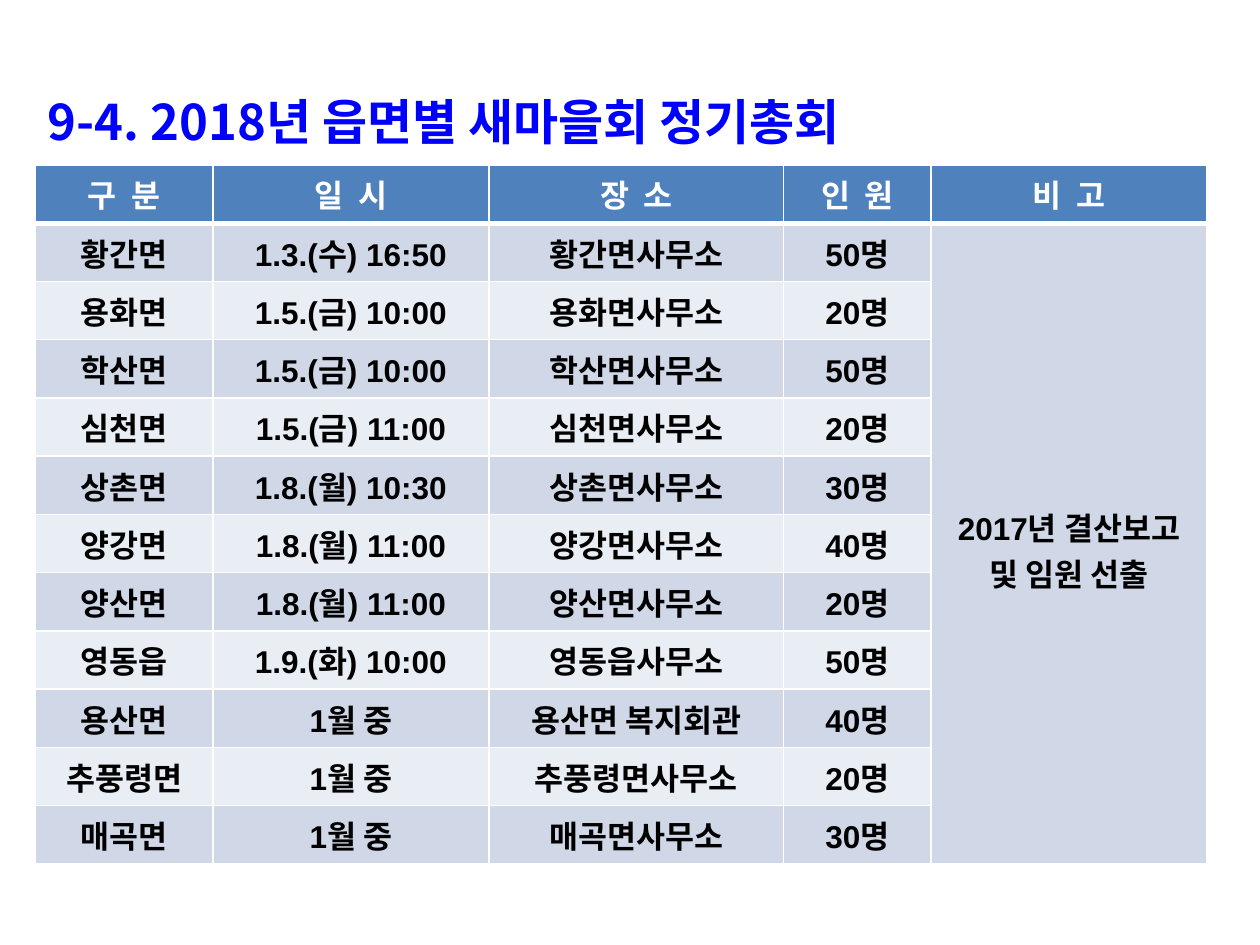
from lxml.etree import SubElement
from pptx import Presentation
from pptx.dml.color import RGBColor
from pptx.enum.text import MSO_ANCHOR, MSO_AUTO_SIZE, PP_ALIGN
from pptx.oxml.ns import qn
from pptx.util import Inches, Pt

COLORS = {
    "title": "0000FF",
    "header": "4F81BD",
    "odd": "D0D8E8",
    "even": "E9EDF4",
    "white": "FFFFFF",
    "black": "000000",
}
KOREAN_FONT = "Noto Sans CJK KR"
HEADERS = ["구  분", "일  시", "장  소", "인  원", "비  고"]
MEETINGS = [
    ("황간면", "1.3.(수) 16:50", "황간면사무소", "50명"),
    ("용화면", "1.5.(금) 10:00", "용화면사무소", "20명"),
    ("학산면", "1.5.(금) 10:00", "학산면사무소", "50명"),
    ("심천면", "1.5.(금) 11:00", "심천면사무소", "20명"),
    ("상촌면", "1.8.(월) 10:30", "상촌면사무소", "30명"),
    ("양강면", "1.8.(월) 11:00", "양강면사무소", "40명"),
    ("양산면", "1.8.(월) 11:00", "양산면사무소", "20명"),
    ("영동읍", "1.9.(화) 10:00", "영동읍사무소", "50명"),
    ("용산면", "1월 중", "용산면 복지회관", "40명"),
    ("추풍령면", "1월 중", "추풍령면사무소", "20명"),
    ("매곡면", "1월 중", "매곡면사무소", "30명"),
]
REMARK = "2017년 결산보고 및 임원 선출"
COLUMN_WIDTHS = [1.41, 2.19, 2.34, 1.17, 2.19]
HEADER_HEIGHT, ROW_HEIGHT = 0.43, 0.41


class SlideBuilder:
    """Hold the style and the current slide, and add its elements."""

    def __init__(self, presentation):
        self.slide = presentation.slides.add_slide(presentation.slide_layouts[5])

    def text(self, text_frame, text, size, color, font, alignment):
        text_frame.text = text
        paragraph = text_frame.paragraphs[0]
        paragraph.alignment = alignment
        for run in paragraph.runs:
            run.font.size = Pt(size)
            run.font.bold = True
            run.font.name = font
            run.font.color.rgb = RGBColor.from_string(COLORS[color])
            SubElement(run.font._element, qn("a:ea"), typeface=KOREAN_FONT)
        return paragraph

    def title(self, text, left, top, width, height):
        shape = self.slide.shapes.title
        shape.left, shape.top = Inches(left), Inches(top)
        shape.width, shape.height = Inches(width), Inches(height)
        text_frame = shape.text_frame
        text_frame.auto_size = MSO_AUTO_SIZE.NONE
        text_frame.word_wrap = True
        text_frame.vertical_anchor = MSO_ANCHOR.TOP
        paragraph = self.text(text_frame, text, 28, "title", KOREAN_FONT, PP_ALIGN.JUSTIFY)
        paragraph.line_spacing = 1.5
        paragraph.space_before = Pt(0)

    def borders(self, cell, bottom_width):
        properties = cell._tc.get_or_add_tcPr()
        for side, width in (("L", 1), ("R", 1), ("T", 1), ("B", bottom_width)):
            line = SubElement(properties, qn(f"a:ln{side}"), w=str(Pt(width)))
            fill = SubElement(line, qn("a:solidFill"))
            SubElement(fill, qn("a:srgbClr"), val=COLORS["white"])

    def cell(self, cell, text, fill, color="black", bottom_width=1):
        self.borders(cell, bottom_width)
        cell.fill.solid()
        cell.fill.fore_color.rgb = RGBColor.from_string(COLORS[fill])
        cell.vertical_anchor = MSO_ANCHOR.MIDDLE
        self.text(cell.text_frame, text, 18, color, "Arial", PP_ALIGN.CENTER)

    def meeting_table(self, left, top):
        row_count = len(MEETINGS) + 1
        height = HEADER_HEIGHT + ROW_HEIGHT * len(MEETINGS)
        table = self.slide.shapes.add_table(
            row_count, len(HEADERS), Inches(left), Inches(top),
            Inches(sum(COLUMN_WIDTHS)), Inches(height),
        ).table
        for column, width in zip(table.columns, COLUMN_WIDTHS):
            column.width = Inches(width)
        for index, row in enumerate(table.rows):
            row.height = Inches(ROW_HEIGHT if index else HEADER_HEIGHT)
        for column, text in enumerate(HEADERS):
            self.cell(table.cell(0, column), text, "header", "white", 3)
        for row, meeting in enumerate(MEETINGS, start=1):
            for column, text in enumerate(meeting):
                self.cell(table.cell(row, column), text, "odd" if row % 2 else "even")
        last_column = len(HEADERS) - 1
        remark = table.cell(1, last_column)
        remark.merge(table.cell(row_count - 1, last_column))
        self.cell(remark, REMARK, "odd")
        remark.margin_top = Inches(0.15)


def main():
    presentation = Presentation()
    presentation.slide_width, presentation.slide_height = Inches(10), Inches(7.5)
    builder = SlideBuilder(presentation)
    builder.title("9-4. 2018년 읍면별 새마을회 정기총회", 0.28, 0.44, 10, 6.09)
    builder.meeting_table(0.28, 1.31)
    presentation.save("out.pptx")


if __name__ == "__main__":
    main()
